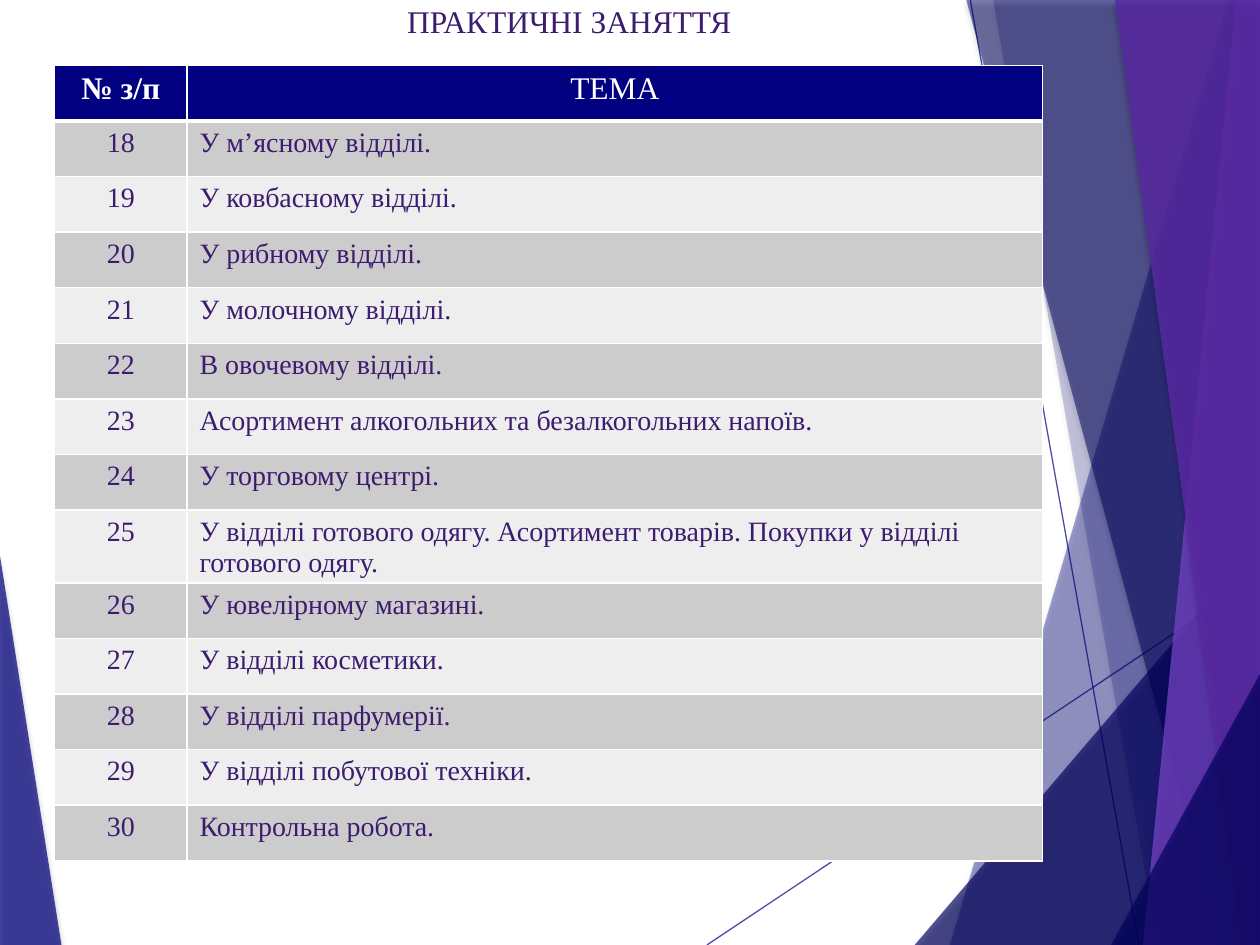
"""Builds a slide listing practical lessons in a table over a faceted backdrop."""
from lxml import etree
from pptx import Presentation
from pptx.dml.color import RGBColor
from pptx.enum.shapes import MSO_CONNECTOR
from pptx.enum.text import MSO_ANCHOR, PP_ALIGN
from pptx.oxml.ns import qn
from pptx.util import Cm, Pt

STRAIGHT = MSO_CONNECTOR.STRAIGHT
TOP = MSO_ANCHOR.TOP
LEFT, MID = PP_ALIGN.LEFT, PP_ALIGN.CENTER
WIDE, HIGH = 25.4, 19.05
HUES = {
    "navy": "000080", "deep": "000060", "lilac": "7B46D0", "plum": "5A2AA6",
    "ink": "3C1C6F", "white": "FFFFFF", "dark": "CCCCCC", "pale": "EEEEEE",
    "black": "000000",
}
TOPICS = [
    "У м’ясному відділі.",
    "У ковбасному відділі.",
    "У рибному відділі.",
    "У молочному відділі.",
    "В овочевому відділі.",
    "Асортимент алкогольних та безалкогольних напоїв.",
    "У торговому центрі.",
    "У відділі готового одягу. Асортимент товарів. Покупки у відділі готового одягу.",
    "У ювелірному магазині.",
    "У відділі косметики.",
    "У відділі парфумерії.",
    "У відділі побутової техніки.",
    "Контрольна робота.",
]


def assign(item, values):
    for name, value in values.items():
        setattr(item, name, value)


def tint(parent, hue, alpha=100):
    color = etree.SubElement(parent, qn("a:srgbClr"), val=HUES[hue])
    if alpha < 100:
        etree.SubElement(color, qn("a:alpha"), val=str(alpha * 1000))


def fade(shape, alpha):
    for color in shape.element.spPr.iter(qn("a:srgbClr")):
        etree.SubElement(color, qn("a:alpha"), val=str(alpha * 1000))


class Deck:
    def __init__(self):
        self.show = Presentation()
        assign(self.show, {"slide_width": Cm(WIDE), "slide_height": Cm(HIGH)})
        self.slide = self.show.slides.add_slide(self.show.slide_layouts[5])
        self.face = "Times New Roman"

    def label(self, frame, text, size, hue, align, bold=False):
        frame.text = text
        para = frame.paragraphs[0]
        para.alignment = align
        font = para.runs[0].font
        assign(font, {"name": self.face, "size": Pt(size), "bold": bold})
        font.color.rgb = RGBColor.from_string(HUES[hue])

    def title(self, text, left, top, width, height):
        box = self.slide.shapes.title
        assign(box, {"left": Cm(left), "top": Cm(top),
                     "width": Cm(width), "height": Cm(height)})
        frame = box.text_frame
        assign(frame, {"word_wrap": True, "vertical_anchor": TOP})
        self.label(frame, text, 18, "ink", MID)
        tree = box.element.getparent()
        tree.append(box.element)

    def facet(self, points, hue, alpha):
        spots = [(Cm(x), Cm(y)) for x, y in points]
        pen = self.slide.shapes.build_freeform(*spots[0], scale=1)
        pen.add_line_segments(spots[1:], close=True)
        shape = pen.convert_to_shape()
        shape.fill.solid()
        shape.fill.fore_color.rgb = RGBColor.from_string(HUES[hue])
        shape.line.fill.background()
        fade(shape, alpha)
        shape.shadow.inherit = False
        glow = etree.SubElement(
            shape.element.spPr.find(qn("a:effectLst")), qn("a:outerShdw"),
            blurRad=str(Pt(3)), dist=str(Pt(2)), dir="5400000", rotWithShape="0")
        tint(glow, "black", 35)

    def line(self, *ends):
        rule = self.slide.shapes.add_connector(STRAIGHT, *map(Cm, ends))
        rule.line.color.rgb = RGBColor.from_string(HUES["navy"])
        rule.line.width = Pt(0.75)
        fade(rule, 70)
        etree.SubElement(rule.element.spPr, qn("a:effectLst"))

    def border(self, cell, widths):
        props = cell._tc.get_or_add_tcPr()
        for side, width in zip("LRTB", widths):
            edge = etree.SubElement(props, qn("a:ln" + side), w=str(Pt(width)))
            tint(etree.SubElement(edge, qn("a:solidFill")), "white")

    def table(self, rows, left, top, widths, height):
        grid = self.slide.shapes.add_table(
            len(rows), len(widths), Cm(left), Cm(top),
            Cm(sum(widths)), Cm(height * len(rows))).table
        for col, width in zip(grid.columns, widths):
            col.width = Cm(width)
        for i, row in enumerate(rows):
            grid.rows[i].height = Cm(height)
            back = "navy" if i == 0 else ("pale", "dark")[i % 2]
            size, hue = (18, "white") if i == 0 else (16, "ink")
            for j, text in enumerate(row):
                cell = grid.cell(i, j)
                assign(cell, {"margin_bottom": Cm(0.09), "vertical_anchor": TOP})
                self.border(cell, (0.96, 0.96, 3 if i == 1 else 0.96,
                                   3 if i == 0 else 0.96))
                cell.fill.solid()
                cell.fill.fore_color.rgb = RGBColor.from_string(HUES[back])
                align = MID if i == 0 or j == 0 else LEFT
                self.label(cell.text_frame, text, size, hue, align, i + j == 0)


def main():
    deck = Deck()
    base, peak = (WIDE, HIGH), (WIDE, 0)

    def slab(top, foot, hue, alpha):
        deck.facet([(top, 0), (foot, HIGH), base, peak], hue, alpha)

    def wedge(foot, rise, hue, alpha):
        deck.facet([(foot, HIGH), (WIDE, rise), base], hue, alpha)

    deck.facet([(0, 11.2), (1.24, HIGH), (0, HIGH)], "navy", 70)
    deck.line(14.25, 19.05, 25.4, 11.61)
    deck.line(19.56, 0, 22.96, 19.05)
    slab(24.77, 19.15, "navy", 36)
    slab(20.02, 23.34, "navy", 20)
    wedge(18.44, 10.9, "deep", 66)
    slab(19.48, 24.61, "deep", 50)
    slab(24.92, 23.04, "lilac", 70)
    slab(22.48, 25.07, "plum", 82)
    wedge(22.4, 13.59, "deep", 66)

    lessons = [(str(n), topic) for n, topic in enumerate(TOPICS, 18)]
    deck.table([("№ з/п", "ТЕМА")] + lessons, 1.1, 1.32, (2.67, 17.25), 1.12)
    deck.title("ПРАКТИЧНІ ЗАНЯТТЯ", 5.1, -0.08, 12.75, 1.02)
    deck.show.save("out.pptx")


if __name__ == "__main__":
    main()
